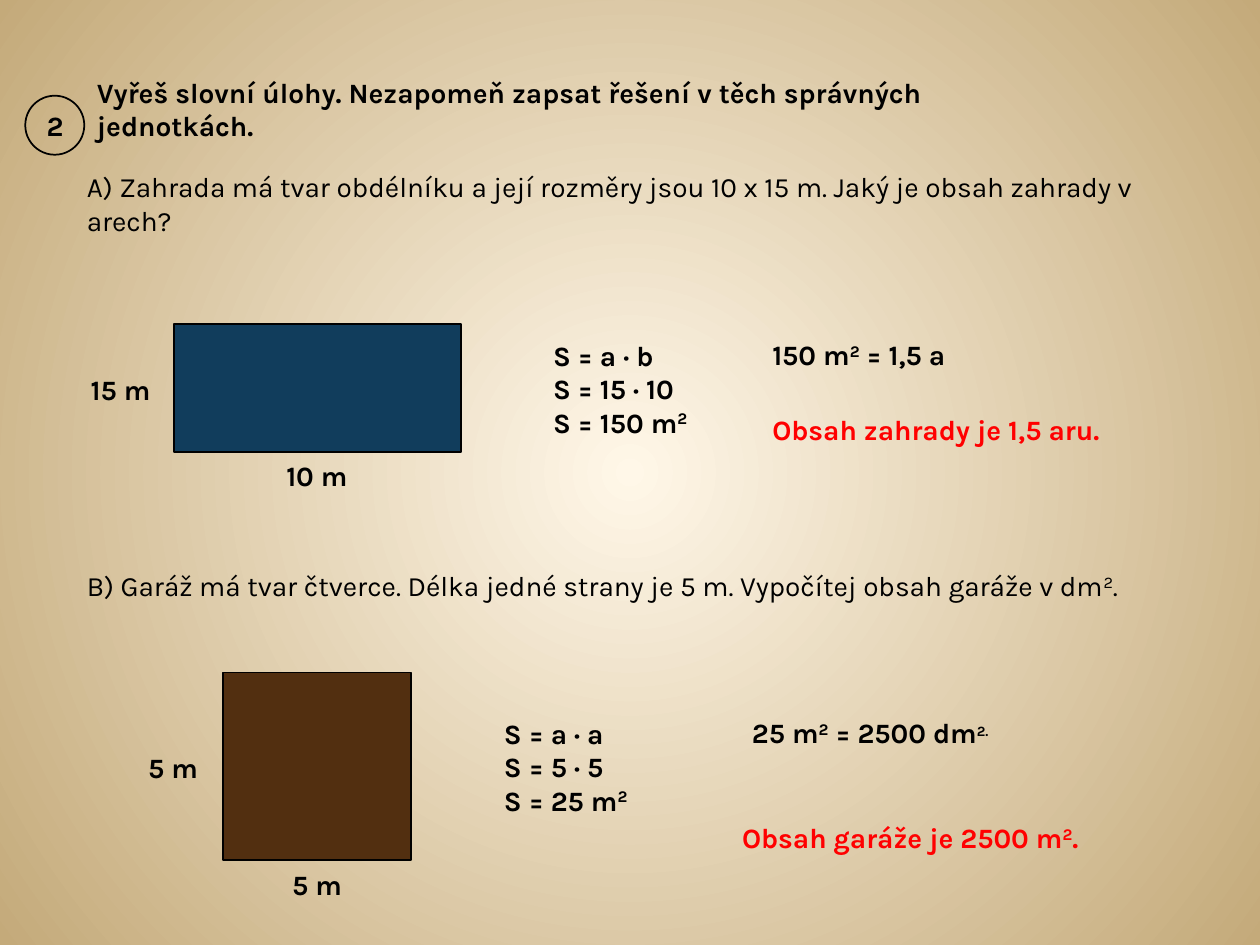
from lxml.etree import SubElement
from pptx import Presentation
from pptx.dml.color import RGBColor
from pptx.enum.shapes import MSO_SHAPE
from pptx.enum.text import MSO_ANCHOR, MSO_AUTO_SIZE, PP_ALIGN
from pptx.oxml.ns import qn
from pptx.util import Cm, Pt

COLORS = {
    "ink": "000000",
    "answer": "FF0000",
    "garden": "113D5C",
    "garage": "522F10",
    "center": "FFF7E8",
    "edge": "C4AA7A",
}
LINE_HEIGHT = 0.94


def color(name):
    return RGBColor.from_string(COLORS[name])


class WorksheetSlide:
    font_name = "Karla"
    font_size = 16

    def __init__(self, presentation):
        self.slide = presentation.slides.add_slide(presentation.slide_layouts[5])

    def background(self):
        fill = self.slide.background.fill
        fill.gradient()
        for stop, name, position in zip(fill.gradient_stops, ("center", "edge"), (0, 1)):
            stop.color.rgb = color(name)
            stop.position = position
        gradient = self.slide.background._cSld.find(".//" + qn("a:gradFill"))
        gradient.remove(gradient.find(qn("a:lin")))
        circle = SubElement(gradient, qn("a:path"), {"path": "circle"})
        sides = {side: "50000" for side in "ltrb"}
        SubElement(circle, qn("a:fillToRect"), sides)

    def set_lines(self, shape, lines, bold=True, ink="ink",
                  align=PP_ALIGN.LEFT, anchor=MSO_ANCHOR.MIDDLE):
        frame = shape.text_frame
        frame.word_wrap = True
        frame.auto_size = MSO_AUTO_SIZE.NONE
        frame.vertical_anchor = anchor
        for index, line in enumerate(lines):
            paragraph = frame.add_paragraph() if index else frame.paragraphs[0]
            paragraph.alignment = align
            for part, words in enumerate(line.split("|")):
                if not words:
                    continue
                run = paragraph.add_run()
                run.text = words
                run.font.name = self.font_name
                run.font.size = Pt(self.font_size)
                run.font.bold = bold
                run.font.color.rgb = color(ink)
                if part % 2:
                    run.font._element.set("baseline", "30000")
        return shape

    def title(self, left, top, width, line):
        shape = self.slide.shapes.title
        shape.left, shape.top = Cm(left), Cm(top)
        shape.width, shape.height = Cm(width), Cm(LINE_HEIGHT)
        self.set_lines(shape, [line], anchor=MSO_ANCHOR.BOTTOM)

    def text(self, left, top, width, *lines, height=LINE_HEIGHT, **style):
        box = self.slide.shapes.add_textbox(Cm(left), Cm(top), Cm(width), Cm(height))
        return self.set_lines(box, lines, **style)

    def question(self, top, line):
        self.text(1.5, top, 22.4, line, bold=False, anchor=MSO_ANCHOR.BOTTOM)

    def dimension(self, left, top, line):
        self.text(left, top, 2.72, line, align=PP_ALIGN.CENTER)

    def calculation(self, left, top, *lines):
        self.text(left, top, 3.99, *lines, height=2.31)

    def answer(self, left, top, line):
        self.text(left, top, 7.37, line, ink="answer")

    def figure(self, kind, left, top, width, height, fill=None):
        shape = self.slide.shapes.add_shape(kind, Cm(left), Cm(top), Cm(width), Cm(height))
        shape.shadow.inherit = False
        if fill:
            shape.fill.solid()
            shape.fill.fore_color.rgb = color(fill)
        else:
            shape.fill.background()
        shape.line.color.rgb = color("ink")
        shape.line.width = Pt(1)


def main():
    presentation = Presentation()
    presentation.slide_width, presentation.slide_height = Cm(25.4), Cm(19.05)
    sheet = WorksheetSlide(presentation)
    sheet.background()

    sheet.text(0.69, 2.06, 0.81, "2", align=PP_ALIGN.CENTER, anchor=MSO_ANCHOR.BOTTOM)
    sheet.figure(MSO_SHAPE.OVAL, 0.51, 1.93, 1.19, 1.19)
    sheet.title(1.7, 2.06, 19.2,
                "Vyřeš slovní úlohy. Nezapomeň zapsat řešení v těch správných jednotkách.")

    sheet.question(3.96, "A) Zahrada má tvar obdélníku a její rozměry jsou 10 x 15 m. "
                         "Jaký je obsah zahrady v arech?")
    sheet.figure(MSO_SHAPE.RECTANGLE, 3.51, 6.53, 5.79, 2.59, "garden")
    sheet.dimension(5.03, 9.12, "10 m")
    sheet.dimension(1.07, 7.37, "15 m")
    sheet.calculation(10.9, 6.68, "S = a · b", "S = 15 · 10", "S = 150 m|2")
    sheet.text(15.32, 6.68, 4.37, "150 m|2| = 1,5 a")
    sheet.answer(15.32, 8.18, "Obsah zahrady je 1,5 aru.")

    sheet.question(11.33, "B) Garáž má tvar čtverce. Délka jedné strany je 5 m. "
                          "Vypočítej obsah garáže v dm|2|.")
    sheet.figure(MSO_SHAPE.RECTANGLE, 4.5, 13.56, 3.78, 3.78, "garage")
    sheet.dimension(5.03, 17.35, "5 m")
    sheet.dimension(2.13, 14.99, "5 m")
    sheet.calculation(9.91, 14.3, "S = a · a", "S = 5 · 5", "S = 25 m|2")
    conversion = sheet.text(14.91, 14.3, 5.59, "25 m|2| = 2500 dm|2.")
    conversion.text_frame.paragraphs[0].runs[-1].font.size = Pt(14)
    sheet.answer(14.71, 16.41, "Obsah garáže je 2500 m|2|.")

    presentation.save("out.pptx")


if __name__ == "__main__":
    main()
